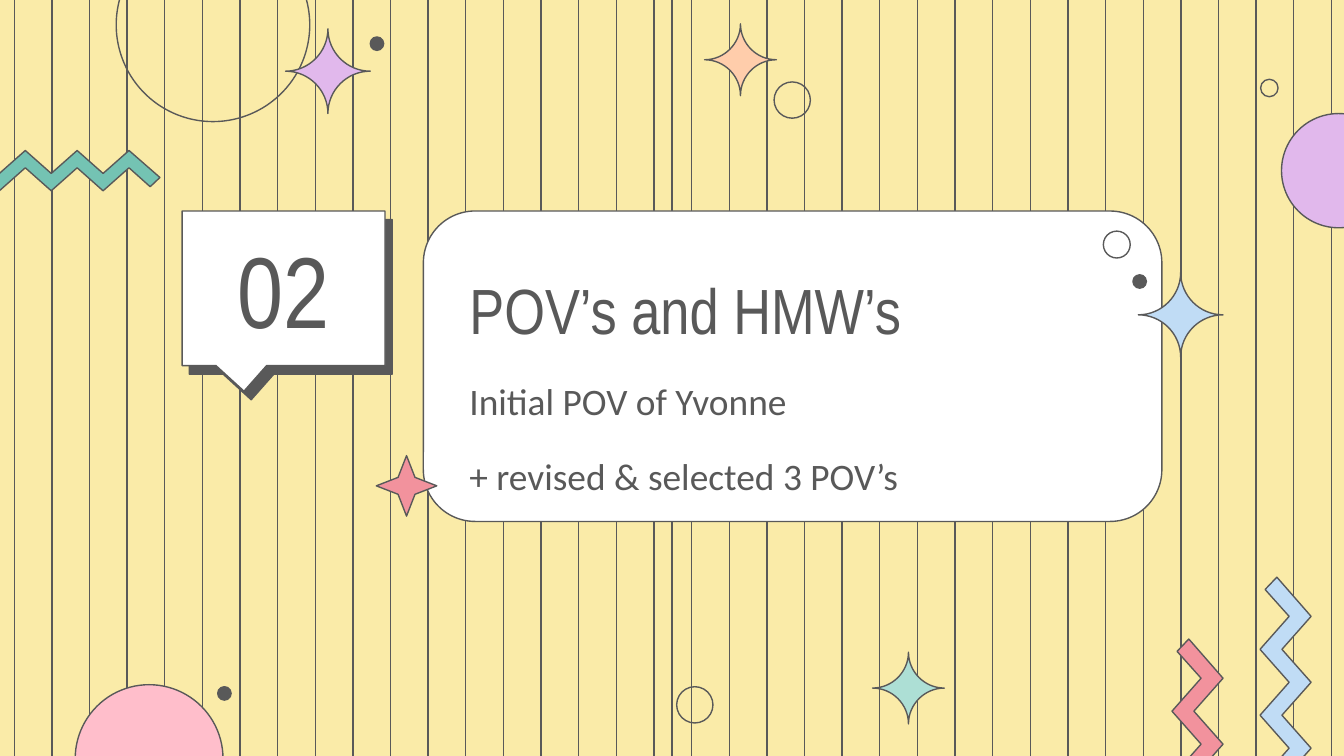
from dataclasses import dataclass

from lxml import etree
from pptx import Presentation, util as u
from pptx.dml.color import RGBColor
from pptx.enum import shapes, text
from pptx.oxml.ns import qn

# Grid of square cells: every position and size below is in columns and rows.
CELL = u.Inches(0.1)
COLUMNS, ROWS = 100, 56.25


@dataclass(frozen=True)
class Theme:
    background: str = "FAEBA8"
    ink: str = "595959"
    white: str = "FFFFFF"
    lilac: str = "E1B8EC"
    green: str = "74C3B3"
    mint: str = "ADDFD5"
    coral: str = "F2929D"
    blue: str = "C0DCF5"
    pink: str = "FFBECB"
    peach: str = "FFCDAB"
    heading_font: str = "Arial Narrow"
    body_font: str = "Calibri"
    number_size: float = 54
    title_size: float = 34.2
    body_size: float = 20
    body_gap: float = 16
    outline: float = 0.75


THEME = Theme()


def cells(*counts):
    return [round(count * CELL) for count in counts]


def paint(shape, fill=None):
    """Outline the shape in ink; without a fill colour it stays hollow."""
    shape.shadow.inherit = False
    if fill:
        shape.fill.solid()
        shape.fill.fore_color.rgb = RGBColor.from_string(fill)
    else:
        shape.fill.background()
    shape.line.color.rgb = RGBColor.from_string(THEME.ink)
    shape.line.width = u.Pt(THEME.outline)
    return shape


def add_stripe(slide, column):
    stripe = slide.shapes.add_connector(
        shapes.MSO_CONNECTOR.STRAIGHT, *cells(column, 0, column, ROWS))
    stripe.line.color.rgb = RGBColor.from_string(THEME.ink)
    stripe.line.width = u.Pt(THEME.outline)
    properties = stripe._element.spPr
    etree.SubElement(properties, qn("a:effectLst"))


def add_preset(slide, kind, box, fill=None, adjustments=()):
    shape = slide.shapes.add_shape(kind, *cells(*box))
    for index, value in enumerate(adjustments):
        shape.adjustments[index] = value
    return paint(shape, fill)


def add_circle(slide, left, top, size, fill=None):
    add_preset(slide, shapes.MSO_SHAPE.OVAL, (left, top, size, size), fill)


def add_outline(slide, points, fill):
    corners = [cells(*point) for point in points]
    builder = slide.shapes.build_freeform(*corners[0])
    builder.add_line_segments(corners[1:], close=True)
    return paint(builder.convert_to_shape(), fill)


def add_sparkle(slide, center_x, center_y, radius, fill):
    """Four-pointed star whose sides curve in towards its centre."""
    tips = [(center_x + radius * x, center_y + radius * y)
            for x, y in ((0, -1), (-1, 0), (0, 1), (1, 0))]
    star = add_outline(slide, tips + tips[:1], fill)
    middle = (star.width / 2, star.height / 2)
    pull = 0.55
    start = (star.width / 2, 0)
    for side in list(star._element.iter(qn("a:lnTo"))):
        tip = side[0]
        end = (int(tip.get("x")), int(tip.get("y")))
        for index, anchor in enumerate((start, end)):
            x, y = (round(a + pull * (m - a)) for a, m in zip(anchor, middle))
            handle = etree.SubElement(side, qn("a:pt"), x=str(x), y=str(y))
            side.insert(index, handle)
        side.tag = qn("a:cubicBezTo")
        start = end


def add_zigzag(slide, left, top, width, height, fill):
    """Band of eight bends along the longer side of its box."""
    first, bends = 0.127, 8
    pitch = (1 - 2 * first) / (bends - 1)
    edge = [(0, 0.33)]
    edge += [(first + k * pitch, 0.43 if k % 2 else 1) for k in range(bends)]
    edge.append((0.96, 0.9))
    band = edge + [(1 - along, 1 - across) for along, across in edge]
    if height > width:
        band = [(across, along) for along, across in band]
    add_outline(slide, [(left + x * width, top + y * height) for x, y in band], fill)


def add_hard_shadow(shape):
    effects = shape._element.spPr.find(qn("a:effectLst"))
    shadow = etree.SubElement(
        effects, qn("a:outerShdw"), dist=str(u.Pt(6)), dir=str(50 * 60000),
        algn="bl", rotWithShape="0")
    etree.SubElement(shadow, qn("a:srgbClr"), val=THEME.ink)


def add_text(slide, box, lines, font, size, anchor=text.MSO_ANCHOR.MIDDLE,
             align=text.PP_ALIGN.LEFT, gap=0):
    frame = slide.shapes.add_textbox(*cells(*box)).text_frame
    frame.word_wrap = True
    frame.vertical_anchor = anchor
    frame.margin_left = frame.margin_right = CELL
    frame.margin_top = frame.margin_bottom = CELL
    frame.text = "\n".join(lines)
    for index, paragraph in enumerate(frame.paragraphs):
        paragraph.alignment = align
        paragraph.space_before = u.Pt(gap if index else 0)
        paragraph.font.name = font
        paragraph.font.size = u.Pt(size)
        paragraph.font.color.rgb = RGBColor.from_string(THEME.ink)


def add_backdrop(slide):
    background = slide.background.fill
    background.solid()
    background.fore_color.rgb = RGBColor.from_string(THEME.background)
    for index in range(36):
        add_stripe(slide, 1.06 + 2.8 * index)
    add_stripe(slide, COLUMNS / 2)

    for circle in (
        (27.55, 2.75, 1, THEME.ink),
        (8.65, -5.35, 14.4),
        (95.35, 8.45, 8.5, THEME.lilac),
        (93.8, 5.9, 1.3),
        (5.6, 50.95, 11, THEME.pink),
        (16.2, 51.1, 1, THEME.ink),
        (50.35, 51.1, 2.7),
        (57.6, 6.1, 2.7),
    ):
        add_circle(slide, *circle)
    for zigzag in (
        (-6.2, 11.2, 18.1, 3, THEME.green),
        (87.2, 47.55, 3.8, 23, THEME.coral),
        (93.75, 42.95, 3.8, 23, THEME.blue),
    ):
        add_zigzag(slide, *zigzag)
    for sparkle in (
        (24.4, 5.3, 3.15, THEME.lilac),
        (67.6, 51.2, 2.67, THEME.mint),
        (55.1, 4.45, 2.67, THEME.peach),
    ):
        add_sparkle(slide, *sparkle)


def add_section_card(slide):
    add_preset(slide, shapes.MSO_SHAPE.ROUNDED_RECTANGLE,
               (31.5, 15.7, 54.95, 23.1), THEME.white, [0.167])
    number_bubble = add_preset(
        slide, shapes.MSO_SHAPE.ROUNDED_RECTANGULAR_CALLOUT,
        (13.55, 15.7, 15.1, 11.5), THEME.white, [-0.195, 0.666, 0])
    add_hard_shadow(number_bubble)

    add_text(slide, (33.94, 19, 50.1, 7.9), ["POV’s and HMW’s"],
             THEME.heading_font, THEME.title_size)
    add_text(slide, (33.94, 27.16, 61.8, 14.1),
             ["Initial POV of Yvonne", "+ revised & selected 3 POV’s"],
             THEME.body_font, THEME.body_size,
             anchor=text.MSO_ANCHOR.TOP, gap=THEME.body_gap)
    add_text(slide, (16.45, 15.7, 9.3, 11.5), ["02"], THEME.heading_font,
             THEME.number_size, align=text.PP_ALIGN.CENTER)

    add_preset(slide, shapes.MSO_SHAPE.STAR_4_POINT,
               (28, 33.9, 4.5, 4.5), THEME.coral, [0.198])
    add_circle(slide, 82.1, 17.2, 2)
    add_circle(slide, 84.3, 20.45, 1, THEME.ink)
    add_sparkle(slide, 87.85, 23.43, 3.15, THEME.blue)


def main():
    deck = Presentation()
    deck.slide_width, deck.slide_height = cells(COLUMNS, ROWS)
    slide = deck.slides.add_slide(deck.slide_layouts[6])
    add_backdrop(slide)
    add_section_card(slide)
    deck.save("out.pptx")


if __name__ == "__main__":
    main()
